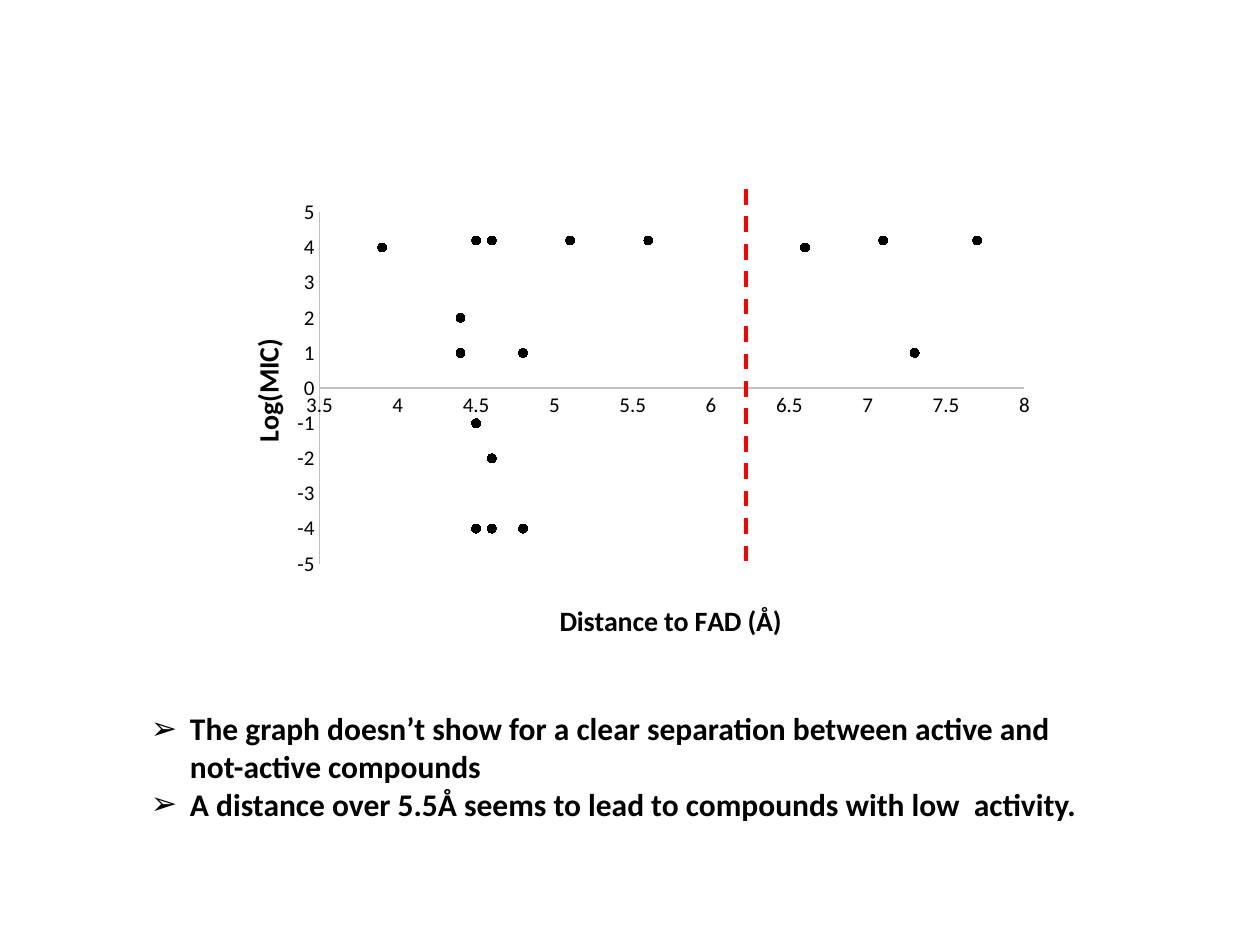
from lxml import etree
from pptx import Presentation
from pptx import util as u
from pptx.chart.data import XyChartData
from pptx.dml.color import RGBColor
from pptx.enum import chart as ch, dml, shapes
from pptx.oxml import ns

COLORS = {"ink": "000000", "axis": "BFBFBF", "limit": "FF0000"}
FONT = "Calibri"
POINTS = [
    (3.9, 4), (4.4, 1), (4.6, 4.2), (4.4, 2), (6.6, 4), (4.6, -4), (4.5, -4),
    (4.4, 1), (4.8, -4), (4.6, -2), (4.8, 1), (7.1, 4.2), (5.6, 4.2),
    (7.7, 4.2), (4.8, 1), (4.5, -1), (7.3, 1), (4.5, 4.2), (5.1, 4.2),
]
FINDINGS = [
    "The graph doesn’t show for a clear separation between active and "
    "not-active compounds",
    "A distance over 5.5Å seems to lead to compounds with low  activity.",
]


def color(name):
    return RGBColor.from_string(COLORS[name])


def place(element, **values):
    """Give a plot area or a title a manual layout, as shares of the chart."""
    for old in element.findall(ns.qn("c:layout")):
        element.remove(old)
    layout = etree.Element(ns.qn("c:layout"))
    manual = etree.SubElement(layout, ns.qn("c:manualLayout"))
    for tag, value in values.items():
        etree.SubElement(manual, ns.qn("c:" + tag)).set("val", str(value))
    text = element.find(ns.qn("c:tx"))
    if text is None:
        element.insert(0, layout)
    else:
        text.addnext(layout)


class SlideBuilder:
    def __init__(self, deck):
        self.page = deck.slides.add_slide(deck.slide_layouts[6])

    def style(self, font, size, bold=False):
        font.name = FONT
        font.size = u.Pt(size)
        font.bold = bold
        font.color.rgb = color("ink")

    def axis(self, axis, title, limits, step, left, top):
        axis.minimum_scale, axis.maximum_scale = limits
        axis.major_unit = step
        axis.has_major_gridlines = False
        axis.major_tick_mark = axis.minor_tick_mark = ch.XL_TICK_MARK.NONE
        axis.tick_label_position = ch.XL_TICK_LABEL_POSITION.NEXT_TO_AXIS
        axis.tick_labels.number_format = "General"
        axis.tick_labels.number_format_is_linked = False
        self.style(axis.tick_labels.font, 12)
        axis.format.line.color.rgb = color("axis")
        axis.format.line.width = u.Pt(0.75)
        frame = axis.axis_title.text_frame
        frame.text = title
        self.style(frame.paragraphs[0].runs[0].font, 16, bold=True)
        place(axis.axis_title._element,
              xMode="edge", yMode="edge", x=left, y=top)

    def scatter(self, points, left, top, width, height):
        data = XyChartData()
        series = data.add_series("Series 1")
        for x, y in points:
            series.add_data_point(x, y)
        chart = self.page.shapes.add_chart(
            ch.XL_CHART_TYPE.XY_SCATTER, u.Inches(left), u.Inches(top),
            u.Inches(width), u.Inches(height), data).chart
        chart.has_legend = False
        chart.has_title = False
        self.style(chart.font, 16)
        chart.plots[0].vary_by_categories = False
        dots = chart.plots[0].series[0]
        dots.smooth = False
        dots.format.line.fill.background()
        dots.marker.style = ch.XL_MARKER_STYLE.CIRCLE
        dots.marker.size = 5
        dots.marker.format.fill.solid()
        dots.marker.format.fill.fore_color.rgb = color("ink")
        dots.marker.format.line.color.rgb = color("ink")
        place(chart._chartSpace.chart.plotArea, layoutTarget="inner",
              xMode="edge", yMode="edge", x=0.13, y=0.05, w=0.84, h=0.75)
        return chart

    def bullets(self, lines, left, top, width, height):
        box = self.page.shapes.add_textbox(
            u.Inches(left), u.Inches(top), u.Inches(width), u.Inches(height))
        frame = box.text_frame
        frame.word_wrap = True
        frame.text = "\n".join(lines)
        indent = u.Inches(0.31)
        for para in frame.paragraphs:
            props = para._p.get_or_add_pPr()
            props.set("marL", str(indent))
            props.set("indent", str(-indent))
            etree.SubElement(props, ns.qn("a:buFont")).set("typeface", "Arial")
            etree.SubElement(props, ns.qn("a:buChar")).set("char", "➢")
            for span in para.runs:
                self.style(span.font, 18, bold=True)

    def dashed_line(self, x, top, bottom):
        line = self.page.shapes.add_connector(
            shapes.MSO_CONNECTOR.STRAIGHT,
            u.Inches(x), u.Inches(top), u.Inches(x), u.Inches(bottom))
        line.line.color.rgb = color("limit")
        line.line.width = u.Pt(2.25)
        line.line.dash_style = dml.MSO_LINE.DASH
        etree.SubElement(line._element.spPr, ns.qn("a:effectLst"))


def main():
    deck = Presentation()
    deck.slide_width, deck.slide_height = u.Inches(10), u.Inches(7.5)
    slide = SlideBuilder(deck)

    # Activity against distance
    chart = slide.scatter(POINTS, 1.67, 1.5, 6.66, 3.72)
    slide.axis(chart.category_axis, "Distance to FAD (Å)", (3.5, 8), 0.5,
               0.41, 0.87)
    slide.axis(chart.value_axis, "Log(MIC)", (-5, 5), 1, 0.04, 0.31)

    # Findings
    slide.bullets(FINDINGS, 1.1, 5.58, 7.8, 1.01)

    # Distance limit
    slide.dashed_line(5.92, 1.5, 4.47)

    deck.save("out.pptx")


if __name__ == "__main__":
    main()
